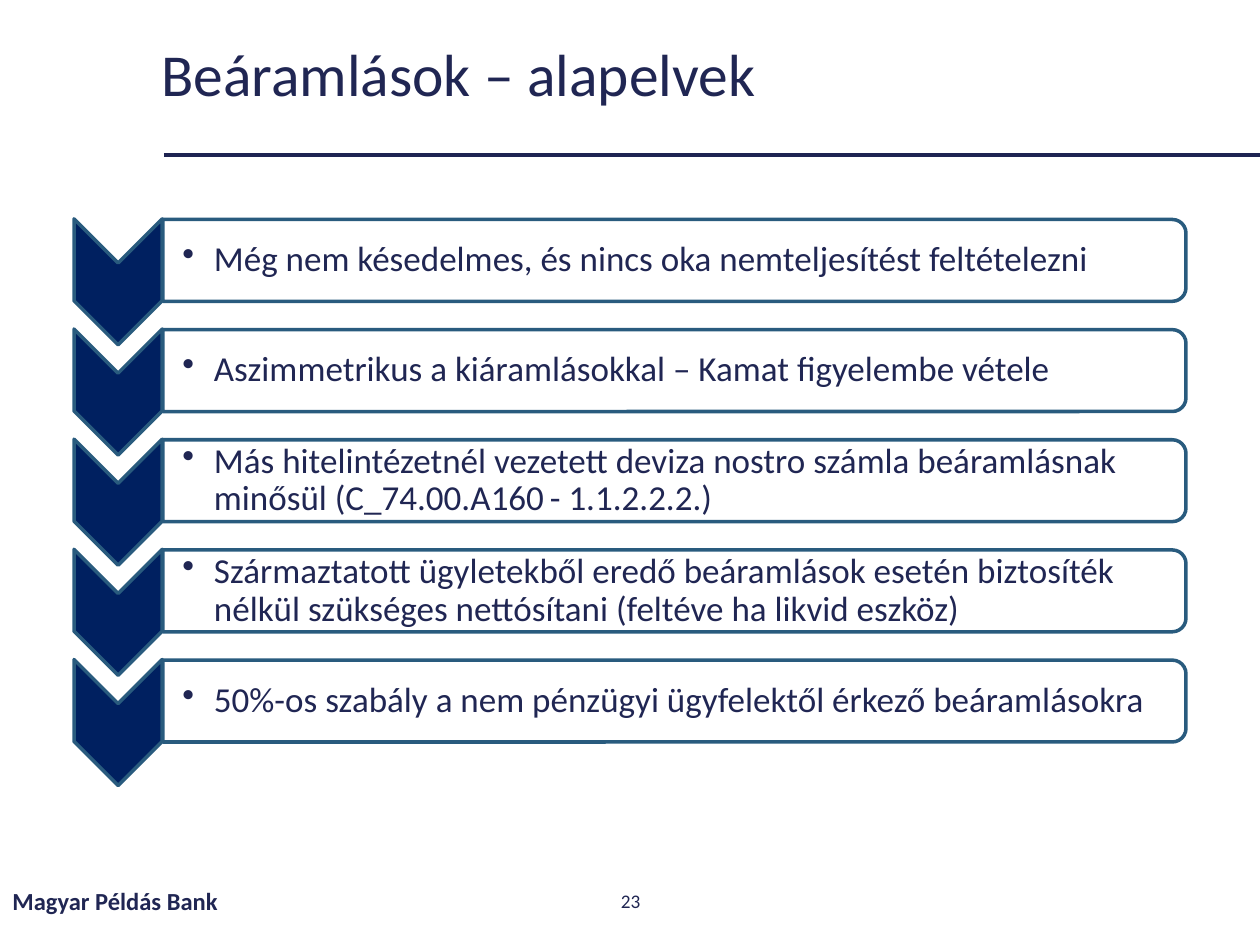
import pptx
import pptx.dml.color
import pptx.enum.shapes
import pptx.enum.text
import pptx.oxml.ns
import pptx.util
import lxml.etree

Pt = pptx.util.Pt
SHAPE = pptx.enum.shapes.MSO_SHAPE
ALIGN = pptx.enum.text.PP_ALIGN
qn = pptx.oxml.ns.qn

NAVY, INK, RULE, EDGE, WHITE = "002060", "202653", "1E2452", "295B7E", "FFFFFF"

PRINCIPLES = [
    "Még nem késedelmes, és nincs oka nemteljesítést feltételezni",
    "Aszimmetrikus a kiáramlásokkal – Kamat figyelembe vétele",
    "Más hitelintézetnél vezetett deviza nostro számla beáramlásnak "
    "minősül (C_74.00.A160\t- 1.1.2.2.2.)",
    "Származtatott ügyletekből eredő beáramlások esetén biztosíték "
    "nélkül szükséges nettósítani (feltéve ha likvid eszköz)",
    "50%-os szabály a nem pénzügyi ügyfelektől érkező beáramlásokra",
]


def color(hex_code):
    return pptx.dml.color.RGBColor.from_string(hex_code)


def write(frame, text, size, bold=False, align=ALIGN.LEFT, spacing=None,
          bullet=False, insets=None):
    """Put one formatted paragraph into a text frame."""
    frame.word_wrap = True
    frame.auto_size = pptx.enum.text.MSO_AUTO_SIZE.NONE
    frame.vertical_anchor = pptx.enum.text.MSO_ANCHOR.MIDDLE
    if insets:
        (frame.margin_left, frame.margin_top,
         frame.margin_right, frame.margin_bottom) = map(Pt, insets)
    paragraph = frame.paragraphs[0]
    paragraph.alignment = align
    if spacing:
        paragraph.line_spacing = spacing
    if bullet:
        properties = paragraph._p.get_or_add_pPr()
        properties.set("marL", str(Pt(18)))
        properties.set("indent", str(Pt(-18)))
        properties.set("defTabSz", str(Pt(70)))
        lxml.etree.SubElement(properties, qn("a:buChar")).set("char", "•")
    run = paragraph.add_run()
    run.text = text
    run.font.name = "Calibri"
    run.font.size = Pt(size)
    run.font.bold = bold
    run.font.color.rgb = color(INK)


class Deck:
    def __init__(self):
        self.presentation = pptx.Presentation()
        self.presentation.slide_width = Pt(720)
        self.presentation.slide_height = Pt(540)
        title_only = self.presentation.slide_layouts[5]
        self.slide = self.presentation.slides.add_slide(title_only)

    def title(self, text, left, top, width, height):
        heading = self.slide.shapes.title
        heading.left, heading.top = Pt(left), Pt(top)
        heading.width, heading.height = Pt(width), Pt(height)
        write(heading.text_frame, text, 34, spacing=0.9)

    def rule(self, left, right, y):
        line = self.slide.shapes.add_connector(
            pptx.enum.shapes.MSO_CONNECTOR.STRAIGHT,
            Pt(left), Pt(y), Pt(right), Pt(y))
        line.line.color.rgb = color(RULE)
        line.line.width = Pt(2.25)
        lxml.etree.SubElement(line._element.spPr, qn("a:effectLst"))

    def text(self, text, left, top, width, height, size, **style):
        box = self.slide.shapes.add_textbox(
            Pt(left), Pt(top), Pt(width), Pt(height))
        write(box.text_frame, text, size, **style)

    def turned_shape(self, kind, center_x, center_y, width, height, fill,
                     opacity=100):
        """Add a shape turned by 90 degrees around its centre."""
        shape = self.slide.shapes.add_shape(
            kind, Pt(center_x - width / 2), Pt(center_y - height / 2),
            Pt(width), Pt(height))
        shape.rotation = 90
        shape.shadow.inherit = False
        shape.fill.solid()
        shape.fill.fore_color.rgb = color(fill)
        shape.line.color.rgb = color(EDGE)
        shape.line.width = Pt(2)
        if opacity < 100:
            tone = shape._element.spPr.find(qn("a:solidFill"))[0]
            lxml.etree.SubElement(tone, qn("a:alpha")).set(
                "val", str(opacity * 1000))

    def principle(self, text, middle):
        self.turned_shape(SHAPE.CHEVRON, 67.5, middle + 12.3, 72, 50.4, NAVY)
        self.turned_shape(SHAPE.ROUND_2_SAME_RECTANGLE, 385.4, middle,
                          46.8, 584.6, WHITE, opacity=90)
        self.text(text, 93.1, middle - 21.2, 582, 42.4, 20, spacing=0.9,
                  bullet=True, insets=(11.2, 0.9, 0.9, 0.9))


def main():
    deck = Deck()

    # Heading
    deck.rule(93.6, 720, 88.6)
    deck.title("Beáramlások – alapelvek", 85, 14.4, 586.8, 59.8)

    # Footer
    deck.text("Magyar Példás Bank", 0, 500.4, 243.4, 28.8, 14, bold=True)
    deck.text("23", 279.4, 500.4, 162, 28.8, 11, align=ALIGN.CENTER)

    # Chevron list
    first_middle, pitch = 148.8, 62.95
    for row, text in enumerate(PRINCIPLES):
        deck.principle(text, first_middle + row * pitch)

    deck.presentation.save("out.pptx")


if __name__ == "__main__":
    main()
